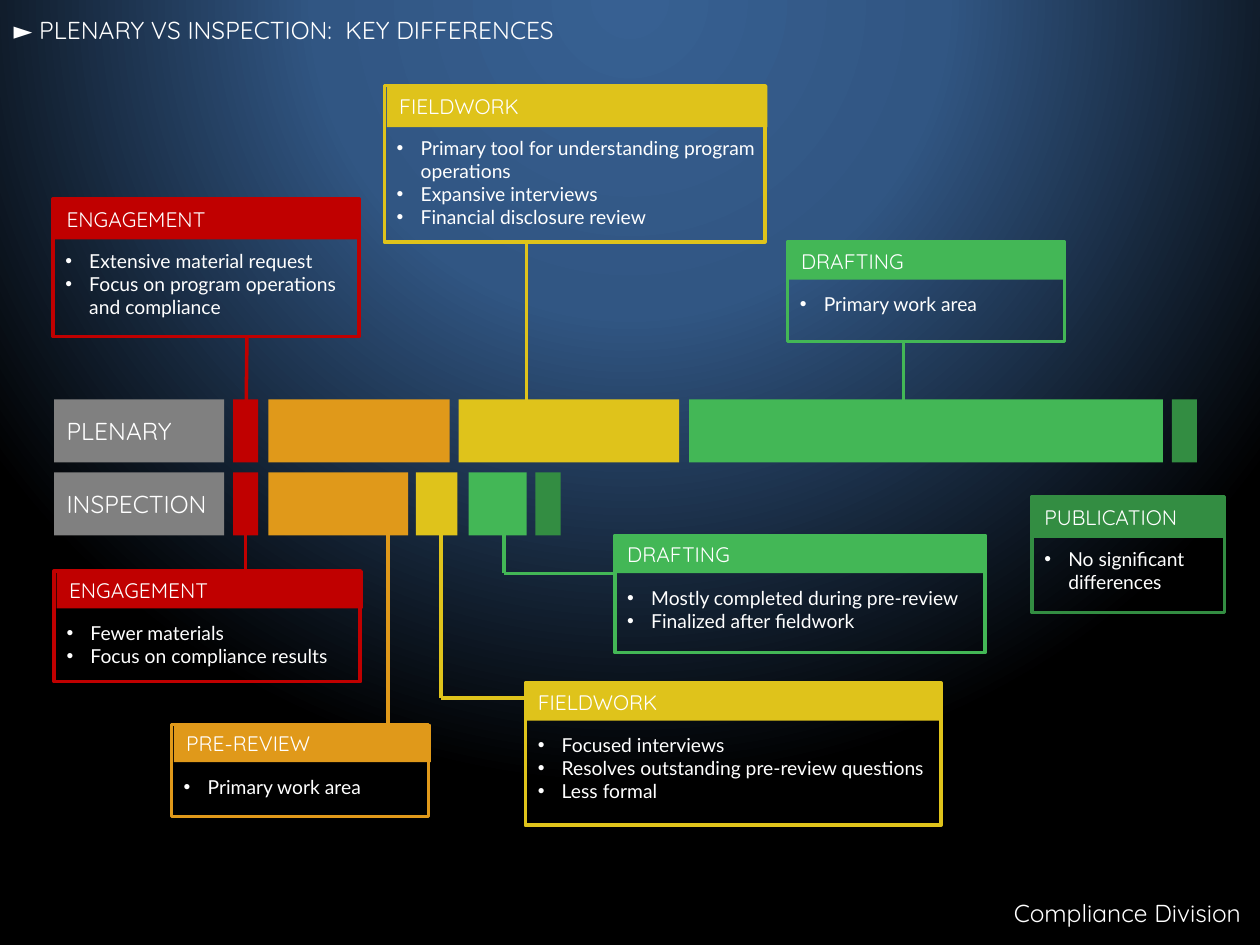
"""Build a slide comparing plenary and inspection timelines with callouts."""
from dataclasses import dataclass
from typing import Optional

from pptx import Presentation
from pptx import oxml
from pptx import util as u
from pptx.dml.color import RGBColor
from pptx.enum import shapes, text
from pptx.oxml import ns

RED = RGBColor(0xC0, 0x00, 0x00)
ORANGE = RGBColor(0xE0, 0x99, 0x1A)
YELLOW = RGBColor(0xDF, 0xC3, 0x1B)
GREEN = RGBColor(0x43, 0xB7, 0x56)
DARK_GREEN = RGBColor(0x33, 0x8D, 0x42)
GREY = RGBColor(0x80, 0x80, 0x80)
WHITE = RGBColor(0xFF, 0xFF, 0xFF)
STAGES = (RED, ORANGE, YELLOW, GREEN, DARK_GREEN)
GLOW = ((0, "376092"), (40, "315683"), (100, "000000"))

LABEL = {"name": "Quicksand", "size": u.Pt(14)}
HEADING = {"name": "Quicksand", "size": u.Pt(12)}
BODY = {"name": "Lato", "size": u.Pt(11)}
HEADER_INSETS = (0.1, 0.05, 0, 0.05)
BODY_INSETS = (0.1, 0.4, 0, 0.05)
BAR_HEIGHT = 0.5
HANG = 0.19


@dataclass
class Track:
    name: str
    top: float
    spans: tuple


@dataclass
class Callout:
    title: str
    color: RGBColor
    box: tuple
    header: float
    points: tuple
    shift: float = 0
    leader: Optional[tuple] = None


TRACKS = (
    Track("PLENARY", 3.17,
          ((1.85, 0.2), (2.13, 1.44), (3.64, 1.75), (5.47, 3.76), (9.3, 0.2))),
    Track("INSPECTION", 3.75,
          ((1.85, 0.2), (2.13, 1.11), (3.3, 0.33), (3.72, 0.46), (4.25, 0.2))),
)

CALLOUTS = (
    Callout("DRAFTING", GREEN, (4.88, 4.25, 2.94, 0.93), 0.3,
            ("Mostly completed during pre-review", "Finalized after fieldwork"),
            leader=((4.88, 4.55), (4, 4.55), (4, 4))),
    Callout("ENGAGEMENT", RED, (0.42, 1.58, 2.43, 1.09), 0.32,
            ("Extensive material request",
             "Focus on program operations and compliance"),
            0.01, ((1.95, 3.6), (1.96, 2.67))),
    Callout("PRE-REVIEW", ORANGE, (1.36, 5.75, 2.04, 0.73), 0.3,
            ("Primary work area",), 0.02, ((3.08, 5.77), (3.08, 3.98))),
    Callout("ENGAGEMENT", RED, (0.43, 4.53, 2.43, 0.88), 0.3,
            ("Fewer materials", "Focus on compliance results"),
            0.02, ((1.95, 4.61), (1.95, 4.2))),
    Callout("FIELDWORK", YELLOW, (4.17, 5.42, 3.3, 1.13), 0.3,
            ("Focused interviews", "Resolves outstanding pre-review questions",
             "Less formal"),
            leader=((4.17, 5.54), (3.5, 5.54), (3.5, 4))),
    Callout("FIELDWORK", YELLOW, (3.05, 0.68, 3.02, 1.24), 0.33,
            ("Primary tool for understanding program operations",
             "Expansive interviews", "Financial disclosure review"),
            0.02, ((4.18, 3.25), (4.18, 1.93))),
    Callout("PUBLICATION", DARK_GREEN, (8.19, 3.94, 1.53, 0.92), 0.33,
            ("No significant differences",)),
    Callout("DRAFTING", GREEN, (6.25, 1.92, 2.2, 0.79), 0.3,
            ("Primary work area",), 0.01, ((7.17, 3.25), (7.17, 2.7))),
)


def set_background(s) -> None:
    s.background.fill.gradient()
    grad = s.element.find(".//" + ns.qn("a:gradFill"))
    stops = "".join(f'<a:gs pos="{pos * 1000}"><a:srgbClr val="{rgb}"/></a:gs>'
                    for pos, rgb in GLOW)
    grad.getparent().replace(grad, oxml.parse_xml(
        f'<a:gradFill {ns.nsdecls("a")} rotWithShape="1"><a:gsLst>{stops}</a:gsLst>'
        '<a:path path="circle"><a:fillToRect l="50000" t="-80000" r="50000" b="180000"/>'
        '</a:path></a:gradFill>'))


def add_bullet(p) -> None:
    pPr = p._p.get_or_add_pPr()
    pPr.set("marL", str(u.Inches(HANG)))
    pPr.set("indent", str(-u.Inches(HANG)))
    for xml in ('a:buFont {} typeface="Arial"', 'a:buChar {} char="•"'):
        pPr.append(oxml.parse_xml(f"<{xml.format(ns.nsdecls('a'))}/>"))


def write(tf, lines: tuple, style: dict, align=text.PP_ALIGN.LEFT,
          bullets: bool = False) -> None:
    tf.word_wrap = True
    for i, line in enumerate(lines):
        p = tf.add_paragraph() if i else tf.paragraphs[0]
        p.alignment = align
        if bullets:
            add_bullet(p)
        r = p.add_run()
        r.text = line
        for key, value in style.items():
            setattr(r.font, key, value)
        r.font.color.rgb = WHITE


def set_frame(tf, anchor, insets: tuple) -> None:
    tf.vertical_anchor = anchor
    for side, inset in zip(("left", "top", "right", "bottom"), insets):
        setattr(tf, f"margin_{side}", u.Inches(inset))


def add_rect(s, box: tuple, fill: Optional[RGBColor] = None,
             line: Optional[RGBColor] = None):
    sp = s.shapes.add_shape(shapes.MSO_SHAPE.RECTANGLE, *map(u.Inches, box))
    sp.shadow.inherit = False
    if fill is None:
        sp.fill.background()
    else:
        sp.fill.solid()
        sp.fill.fore_color.rgb = fill
    if line is None:
        sp.line.fill.background()
    else:
        sp.line.color.rgb = line
        sp.line.width = u.Pt(2)
    return sp


def add_line(s, start: tuple, end: tuple, color: RGBColor) -> None:
    cxn = s.shapes.add_connector(shapes.MSO_CONNECTOR.STRAIGHT,
                                 *map(u.Inches, start + end))
    cxn.line.color.rgb = color
    cxn.line.width = u.Pt(2)
    cxn._element.spPr.append(oxml.parse_xml(f'<a:effectLst {ns.nsdecls("a")}/>'))


def add_track(s, track: Track) -> None:
    sp = add_rect(s, (0.43, track.top, 1.35, BAR_HEIGHT), GREY)
    sp.text_frame.vertical_anchor = text.MSO_ANCHOR.MIDDLE
    write(sp.text_frame, (track.name,), LABEL)
    for (left, width), color in zip(track.spans, STAGES):
        add_rect(s, (left, track.top, width, BAR_HEIGHT), color)


def add_callout(s, c: Callout) -> None:
    left, top, width, _ = c.box
    tf = add_rect(s, (left + c.shift, top, width, c.header), c.color).text_frame
    set_frame(tf, text.MSO_ANCHOR.MIDDLE, HEADER_INSETS)
    write(tf, (c.title,), HEADING)
    tf = add_rect(s, c.box, line=c.color).text_frame
    set_frame(tf, text.MSO_ANCHOR.TOP, BODY_INSETS)
    write(tf, c.points, BODY, bullets=True)
    if c.leader:
        for start, end in zip(c.leader, c.leader[1:]):
            add_line(s, start, end, c.color)


def add_caption(s, box: tuple, caption: str, align) -> None:
    tf = s.shapes.add_textbox(*map(u.Inches, box)).text_frame
    write(tf, (caption,), LABEL, align)
    tf.auto_size = text.MSO_AUTO_SIZE.SHAPE_TO_FIT_TEXT


def main() -> None:
    prs = Presentation()
    prs.slide_width, prs.slide_height = u.Inches(10), u.Inches(7.5)
    s = prs.slides.add_slide(prs.slide_layouts[6])
    set_background(s)
    add_caption(s, (0.01, 0.07, 5.74, 0.34),
                "► PLENARY VS INSPECTION:  KEY DIFFERENCES", text.PP_ALIGN.LEFT)
    add_caption(s, (6.38, 7.08, 3.57, 0.34), "Compliance Division",
                text.PP_ALIGN.RIGHT)
    for track in TRACKS:
        add_track(s, track)
    for callout in CALLOUTS:
        add_callout(s, callout)
    prs.save("out.pptx")


if __name__ == "__main__":
    main()
